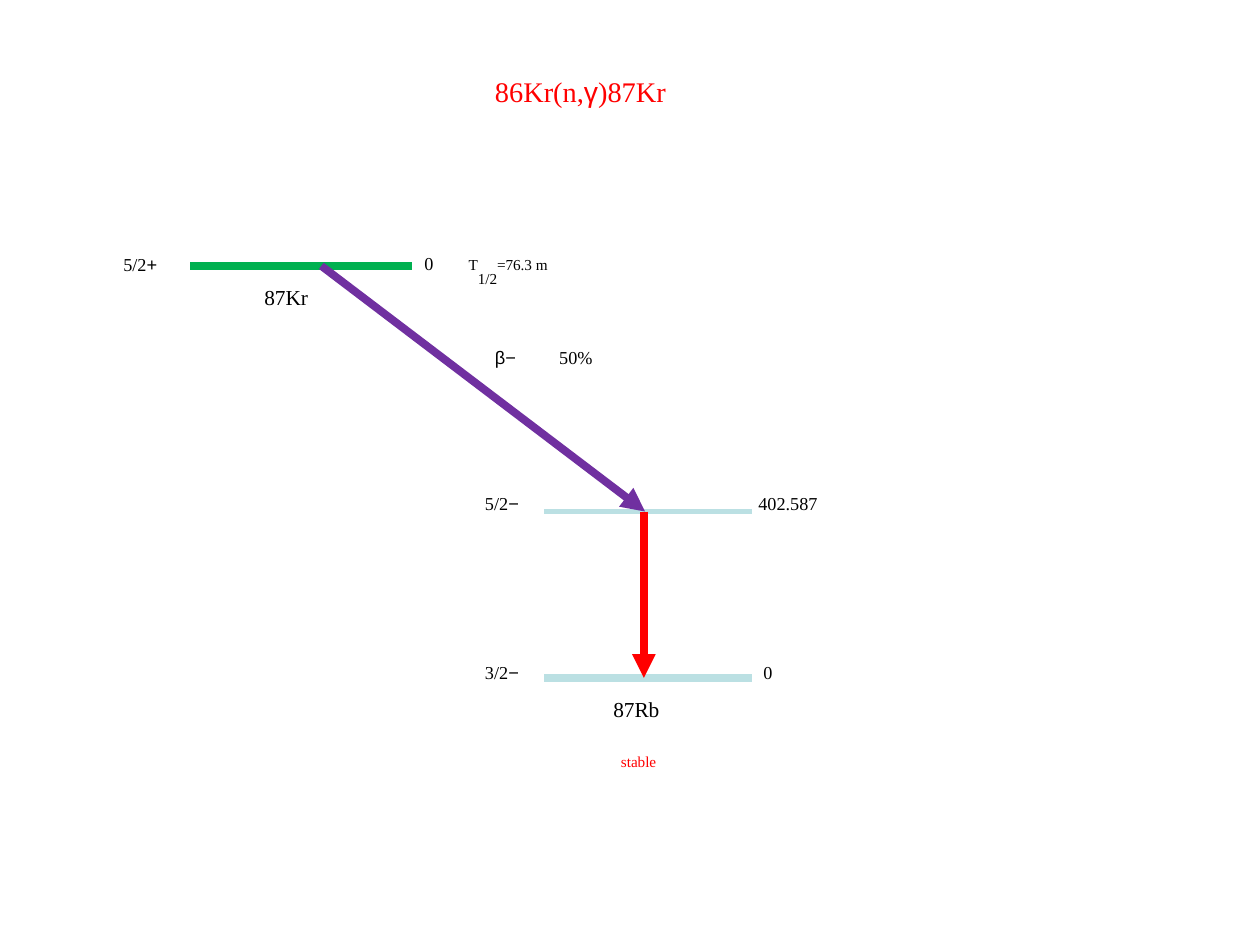
from typing import NamedTuple

from lxml import etree
from pptx import Presentation
from pptx.dml.color import RGBColor
from pptx.enum.shapes import MSO_CONNECTOR
from pptx.enum.text import MSO_AUTO_SIZE
from pptx.oxml.ns import qn
from pptx.util import Inches, Pt

STRAIGHT = MSO_CONNECTOR.STRAIGHT
GROW = MSO_AUTO_SIZE.SHAPE_TO_FIT_TEXT

BLACK = RGBColor(0x00, 0x00, 0x00)
RED = RGBColor(0xFF, 0x00, 0x00)
GREEN = RGBColor(0x00, 0xB0, 0x50)
PALE = RGBColor(0xBB, 0xE0, 0xE3)
PURPLE = RGBColor(0x70, 0x30, 0xA0)

SERIF = "Times New Roman"
SANS = "Arial"
RAISED, LOWERED = 30000, -25000


class Run(NamedTuple):
    text: str
    font: str = SERIF
    base: int = RAISED


class Label(NamedTuple):
    left: float
    top: float
    width: float
    height: float
    size: int
    runs: list[Run]
    color: RGBColor = BLACK


class Line(NamedTuple):
    x1: float
    y1: float
    x2: float
    y2: float
    color: RGBColor
    width: float = 4.5
    arrow: bool = False


def draw_line(slide, line: Line) -> None:
    shape = slide.shapes.add_connector(
        STRAIGHT, Inches(line.x1), Inches(line.y1), Inches(line.x2), Inches(line.y2))
    shape.line.color.rgb = line.color
    shape.line.width = Pt(line.width)
    if line.arrow:
        etree.SubElement(shape.line._ln, qn("a:tailEnd"), type="triangle")
    etree.SubElement(shape._element.spPr, qn("a:effectLst"))


def draw_label(slide, label: Label) -> None:
    box = slide.shapes.add_textbox(
        Inches(label.left), Inches(label.top), Inches(label.width), Inches(label.height))
    frame = box.text_frame
    frame.word_wrap = False
    frame.auto_size = GROW
    for part in label.runs:
        run = frame.paragraphs[0].add_run()
        run.text = part.text
        run.font.name = part.font
        run.font.size = Pt(label.size)
        run.font.color.rgb = label.color
        run.font._element.set("baseline", str(part.base))


def spin(value: str, sign: str) -> list[Run]:
    return [Run(value), Run(sign, SANS)]


# Heights of the three levels
KR, UPPER, GROUND = 2.11, 4.06, 5.38

LEVELS = [
    Line(1.51, KR, 3.27, KR, GREEN),
    Line(4.32, GROUND, 5.97, GROUND, PALE),
    Line(4.32, UPPER, 5.97, UPPER, PALE, 3),
]

DECAYS = [
    Line(5.11, UPPER, 5.11, GROUND, RED, arrow=True),
    Line(2.55, KR, 5.12, UPPER, PURPLE, arrow=True),
]

LABELS = [
    # Parent level
    Label(2, 2.17, 0.71, 0.45, 21, [Run("87"), Run("Kr")]),
    Label(0.88, 1.93, 0.62, 0.4, 18, spin("5/2", "+")),
    Label(3.27, 1.92, 0.33, 0.4, 18, [Run("0")]),
    Label(3.62, 1.95, 1.21, 0.35, 15,
          [Run("T"), Run("1/2", base=LOWERED), Run("=76.3 m")]),
    # Daughter levels
    Label(3.75, 3.83, 0.62, 0.4, 18, spin("5/2", "−")),
    Label(5.92, 3.83, 1.02, 0.4, 18, [Run("402.587")]),
    Label(3.75, 5.17, 0.62, 0.4, 18, spin("3/2", "−")),
    Label(5.96, 5.17, 0.33, 0.4, 18, [Run("0")]),
    Label(4.77, 5.44, 0.74, 0.45, 21, [Run("87"), Run("Rb")]),
    Label(4.83, 5.9, 0.69, 0.35, 15, [Run("stable")], RED),
    # Beta decay
    Label(4.34, 2.67, 0.66, 0.4, 18, [Run("50%")]),
    Label(3.83, 2.67, 0.43, 0.4, 18, [Run("β", SANS), Run("−", SANS)]),
    # Title
    Label(3.83, 0.49, 2.28, 0.57, 28,
          [Run("86"), Run("Kr(n,"), Run("γ", SANS), Run(")"), Run("87"), Run("Kr")], RED),
]


def main() -> None:
    deck = Presentation()
    deck.slide_width, deck.slide_height = Inches(10), Inches(7.5)
    slide = deck.slides.add_slide(deck.slide_layouts[6])
    for line in LEVELS + DECAYS:
        draw_line(slide, line)
    for label in LABELS:
        draw_label(slide, label)
    deck.save("out.pptx")


if __name__ == "__main__":
    main()
